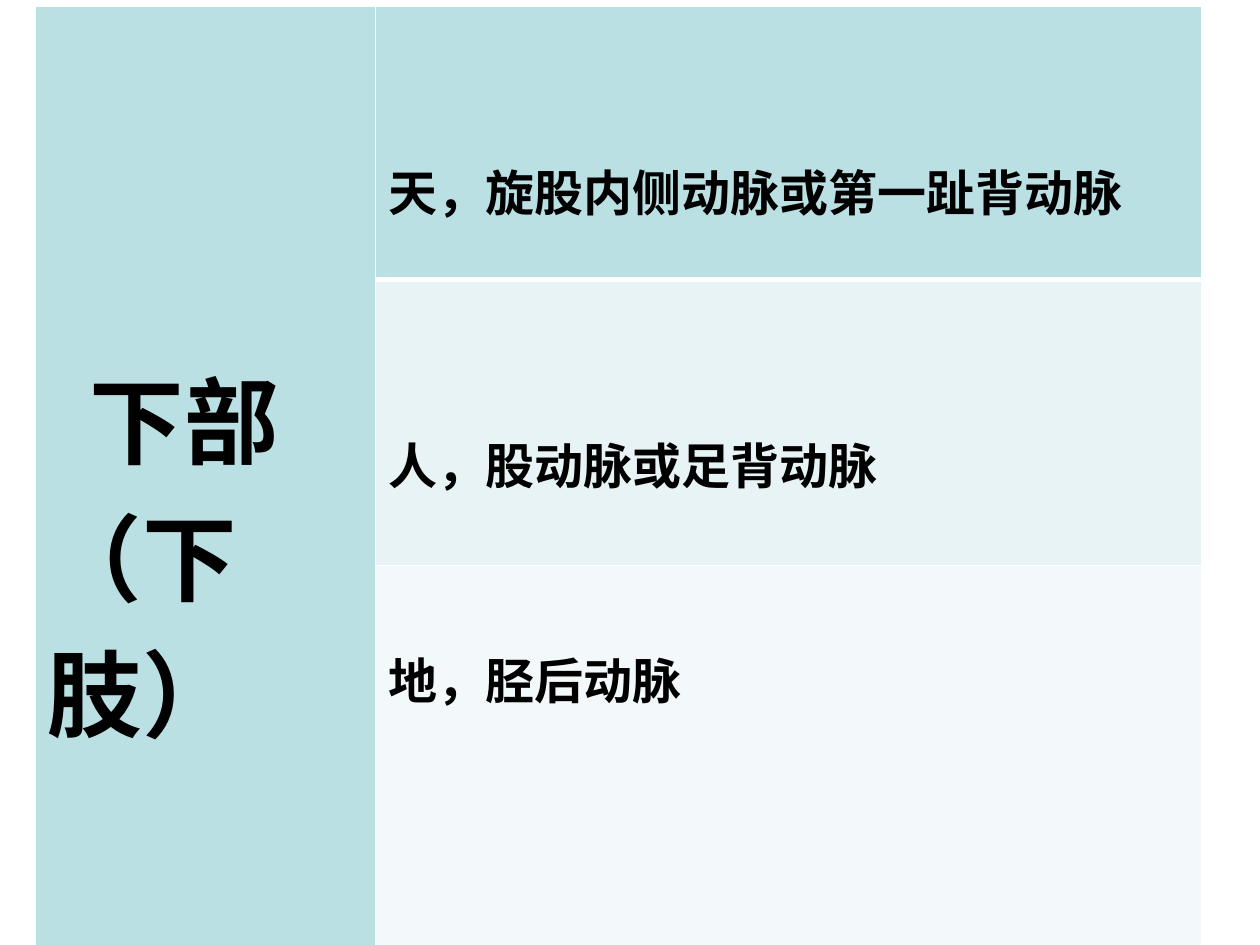
from lxml.etree import SubElement as Sub
from pptx import Presentation
from pptx.dml.color import RGBColor as RGB
from pptx.oxml.ns import qn
from pptx.util import Pt

FONT = "Noto Sans CJK SC"
LEAD = 1.45
PAD = 3.6
COLS = [194.4, 472.3]
HEAD = {"lines": ["下部", "（下肢）"], "size": 54, "fill": "BBE0E3",
        "top": 3 * 44 * LEAD, "shift": 24, "base": 3}
ROWS = [
    (156.2, {"lines": ["天，旋股内侧动脉或第一趾背动脉"], "fill": "BBE0E3",
             "top": 2 * 28 * LEAD, "base": 3}),
    (163.4, {"lines": ["人，股动脉或足背动脉"], "fill": "E7F3F4",
             "top": 2 * 28 * LEAD}),
    (113, {"lines": ["地，胫后动脉"], "fill": "F3F9FA", "top": 28 * LEAD}),
]


def tint(code):
    return RGB.from_string(code)


def edge(cell, side, width):
    line = Sub(cell._tc.get_or_add_tcPr(), qn("a:ln" + side), w=str(Pt(width)))
    Sub(Sub(line, qn("a:solidFill")), qn("a:srgbClr"), val="FFFFFF")


def write(cell, lines, fill, top, size=28, shift=0, base=1):
    for side, width in zip("LRTB", (1, 1, 1, base)):
        edge(cell, side, width)
    cell.fill.solid()
    cell.fill.fore_color.rgb = tint(fill)
    cell.margin_top = Pt(PAD + top)
    frame = cell.text_frame
    for i, line in enumerate(lines):
        para = frame.paragraphs[0] if i == 0 else frame.add_paragraph()
        if i == 0 and shift:
            para._p.get_or_add_pPr().set("marL", str(Pt(shift)))
        run = para.add_run()
        run.text = line
        font = run.font
        font.size, font.bold, font.name = Pt(size), True, FONT
        font.color.rgb = tint("000000")
        Sub(run._r.get_or_add_rPr(), qn("a:ea"), typeface=FONT)


deck = Presentation()
deck.slide_width, deck.slide_height = Pt(720), Pt(540)
slide = deck.slides.add_slide(deck.slide_layouts[6])
high = sum(tall for tall, _ in ROWS)
grid = slide.shapes.add_table(len(ROWS), len(COLS), Pt(20.2), Pt(3.6),
                              Pt(sum(COLS)), Pt(high)).table
for col, wide in zip(grid.columns, COLS):
    col.width = Pt(wide)
grid.cell(0, 0).merge(grid.cell(len(ROWS) - 1, 0))
write(grid.cell(0, 0), **HEAD)
for i, (tall, body) in enumerate(ROWS):
    grid.rows[i].height = Pt(tall)
    write(grid.cell(i, 1), **body)
deck.save("out.pptx")
